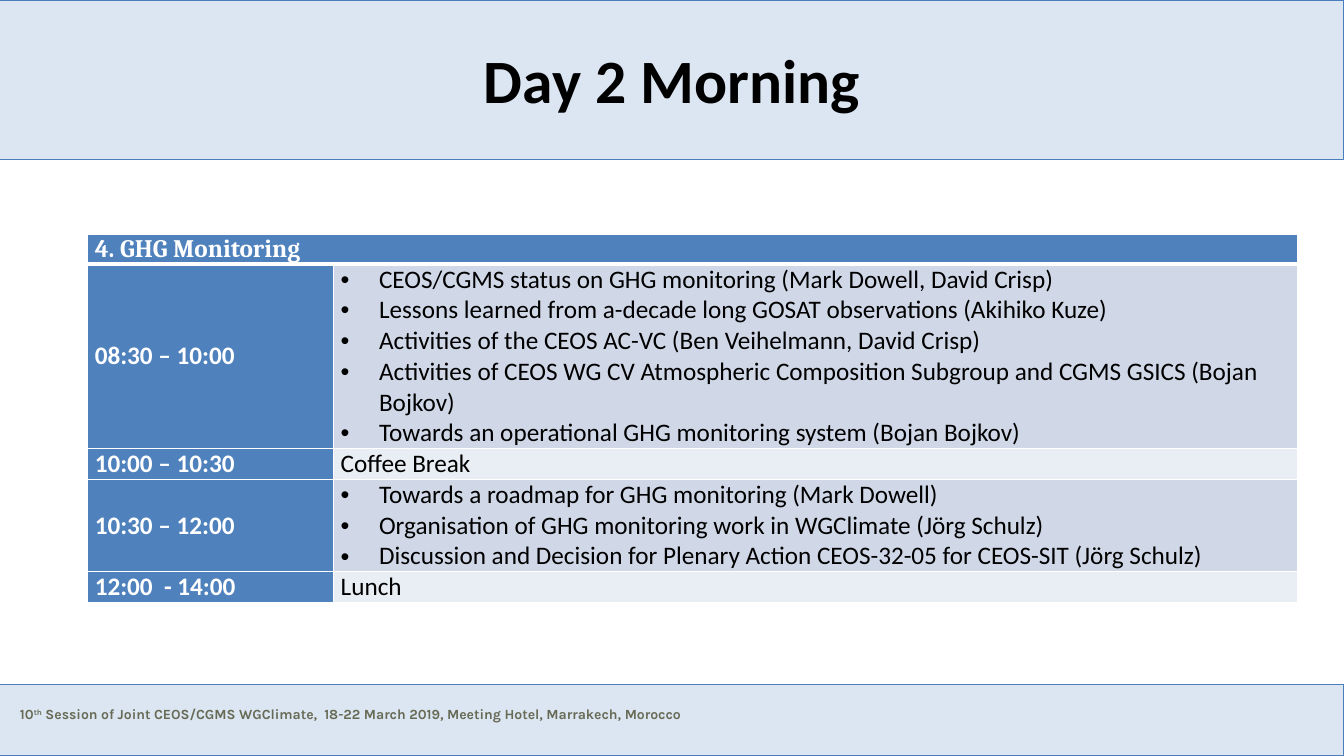
"""Build the Day 2 morning agenda slide."""
from pptx import Presentation
from pptx.dml.color import RGBColor
from pptx.enum.shapes import MSO_SHAPE as Shape
from pptx.enum.text import MSO_ANCHOR as Anchor, PP_ALIGN as Align
from pptx.oxml import parse_xml
from pptx.oxml.ns import nsdecls
from pptx.util import Inches, Pt

BLACK = RGBColor(0, 0, 0)
WHITE = RGBColor(255, 255, 255)
BAND_FILL = RGBColor(0xDC, 0xE6, 0xF2)
BAND_LINE = RGBColor(0x4B, 0x7E, 0xBC)
FOOTER_TEXT = RGBColor(0x67, 0x6A, 0x55)
HEAD_FILL = RGBColor(0x4F, 0x81, 0xBD)
SESSION_FILL = RGBColor(0xD0, 0xD8, 0xE8)
BREAK_FILL = RGBColor(0xE9, 0xED, 0xF4)

LINE_HEIGHT = 0.305
HEADING = "4. GHG Monitoring"
AGENDA = [
    ("08:30 – 10:00", 6, [
        "CEOS/CGMS status on GHG monitoring (Mark Dowell, David Crisp)",
        "Lessons learned from a-decade long GOSAT observations (Akihiko Kuze)",
        "Activities of the CEOS AC-VC (Ben Veihelmann, David Crisp)",
        "Activities of CEOS WG CV Atmospheric Composition Subgroup and CGMS GSICS (Bojan Bojkov)",
        "Towards an operational GHG monitoring system (Bojan Bojkov)",
    ]),
    ("10:00 – 10:30", 1, ["Coffee Break"]),
    ("10:30 – 12:00", 3, [
        "Towards a roadmap for GHG monitoring (Mark Dowell)",
        "Organisation of GHG monitoring work in WGClimate (Jörg Schulz)",
        "Discussion and Decision for Plenary Action CEOS-32-05 for CEOS-SIT (Jörg Schulz)",
    ]),
    ("12:00  - 14:00", 1, ["Lunch"]),
]
FOOTER = [
    ("10", False),
    ("th", True),
    (" Session of Joint CEOS/CGMS WGClimate,  18-22 March 2019, Meeting Hotel, Marrakech, Morocco", False),
]


def set_font(para, name, size, color, bold):
    font = para.font
    font.name, font.size, font.bold = name, Pt(size), bold
    font.color.rgb = color


def add_band(page, top, height):
    band = page.shapes.add_shape(Shape.RECTANGLE, 0, Inches(top), Inches(13.33), Inches(height))
    band.shadow.inherit = False
    band.fill.solid()
    band.fill.fore_color.rgb = BAND_FILL
    band.line.color.rgb = BAND_LINE
    band.line.width = Pt(0.75)


def add_footer(page):
    box = page.shapes.add_textbox(Inches(0.1), Inches(6.95), Inches(10.64), Inches(0.27))
    box.text_frame.word_wrap = True
    para = box.text_frame.paragraphs[0]
    for text, raised in FOOTER:
        span = para.add_run()
        span.text = text
        if raised:
            span.font._element.set("baseline", "30000")
    set_font(para, "Karla", 10, FOOTER_TEXT, True)


def format_title(page):
    title = page.shapes.title
    title.left, title.top = Inches(2.11), Inches(0.16)
    title.width, title.height = Inches(9.11), Inches(1.25)
    title.text_frame.text = "Day 2 Morning"
    title.text_frame.vertical_anchor = Anchor.MIDDLE
    para = title.text_frame.paragraphs[0]
    para.alignment = Align.CENTER
    set_font(para, "Calibri", 44, BLACK, True)
    title.element.getparent().append(title.element)


def add_bullet(para):
    properties = para._p.get_or_add_pPr()
    properties.set("marL", str(Inches(0.38)))
    properties.set("indent", str(Inches(-0.38)))
    properties.append(parse_xml(f'<a:buFont {nsdecls("a")} typeface="Arial"/>'))
    properties.append(parse_xml(f'<a:buChar {nsdecls("a")} char="•"/>'))


def add_borders(cell, top=1, bottom=1):
    properties = cell._tc.get_or_add_tcPr()
    for side, width in (("L", 1), ("R", 1), ("T", top), ("B", bottom)):
        properties.append(parse_xml(
            f'<a:ln{side} {nsdecls("a")} w="{Pt(width)}"><a:solidFill>'
            f'<a:srgbClr val="{WHITE}"/></a:solidFill></a:ln{side}>'))


def fill_cell(cell, lines, fill, color, bold, name="Calibri"):
    cell.fill.solid()
    cell.fill.fore_color.rgb = fill
    cell.margin_left = cell.margin_right = Inches(0.07)
    cell.margin_top = cell.margin_bottom = 0
    cell.vertical_anchor = Anchor.MIDDLE
    cell.text_frame.text = "\n".join(lines)
    for para in cell.text_frame.paragraphs:
        if len(lines) > 1:
            add_bullet(para)
        set_font(para, name, 18, color, bold)


def add_agenda(page):
    frame = page.shapes.add_table(len(AGENDA) + 1, 2, Inches(0.87), Inches(2.33),
                                  Inches(12), Inches(3.65))
    table = frame.table
    table.columns[0].width, table.columns[1].width = Inches(2.44), Inches(9.56)
    table.rows[0].height = Inches(0.29)
    for cell in table.rows[0].cells:
        add_borders(cell, bottom=3)
    heading = table.cell(0, 0)
    heading.merge(table.cell(0, 1))
    fill_cell(heading, [HEADING], HEAD_FILL, WHITE, True, "Cambria")
    for row, (time, line_count, topics) in enumerate(AGENDA, 1):
        table.rows[row].height = Inches(line_count * LINE_HEIGHT)
        for cell in table.rows[row].cells:
            add_borders(cell, top=3 if row == 1 else 1)
        fill_cell(table.cell(row, 0), [time], HEAD_FILL, WHITE, True)
        topic_fill = SESSION_FILL if row % 2 else BREAK_FILL
        fill_cell(table.cell(row, 1), topics, topic_fill, BLACK, False)


def main():
    deck = Presentation()
    deck.slide_width, deck.slide_height = Inches(13.33), Inches(7.5)
    page = deck.slides.add_slide(deck.slide_layouts[5])
    add_band(page, 6.79, 0.71)
    add_band(page, 0, 1.58)
    add_footer(page)
    format_title(page)
    add_agenda(page)
    deck.save("out.pptx")


if __name__ == "__main__":
    main()
